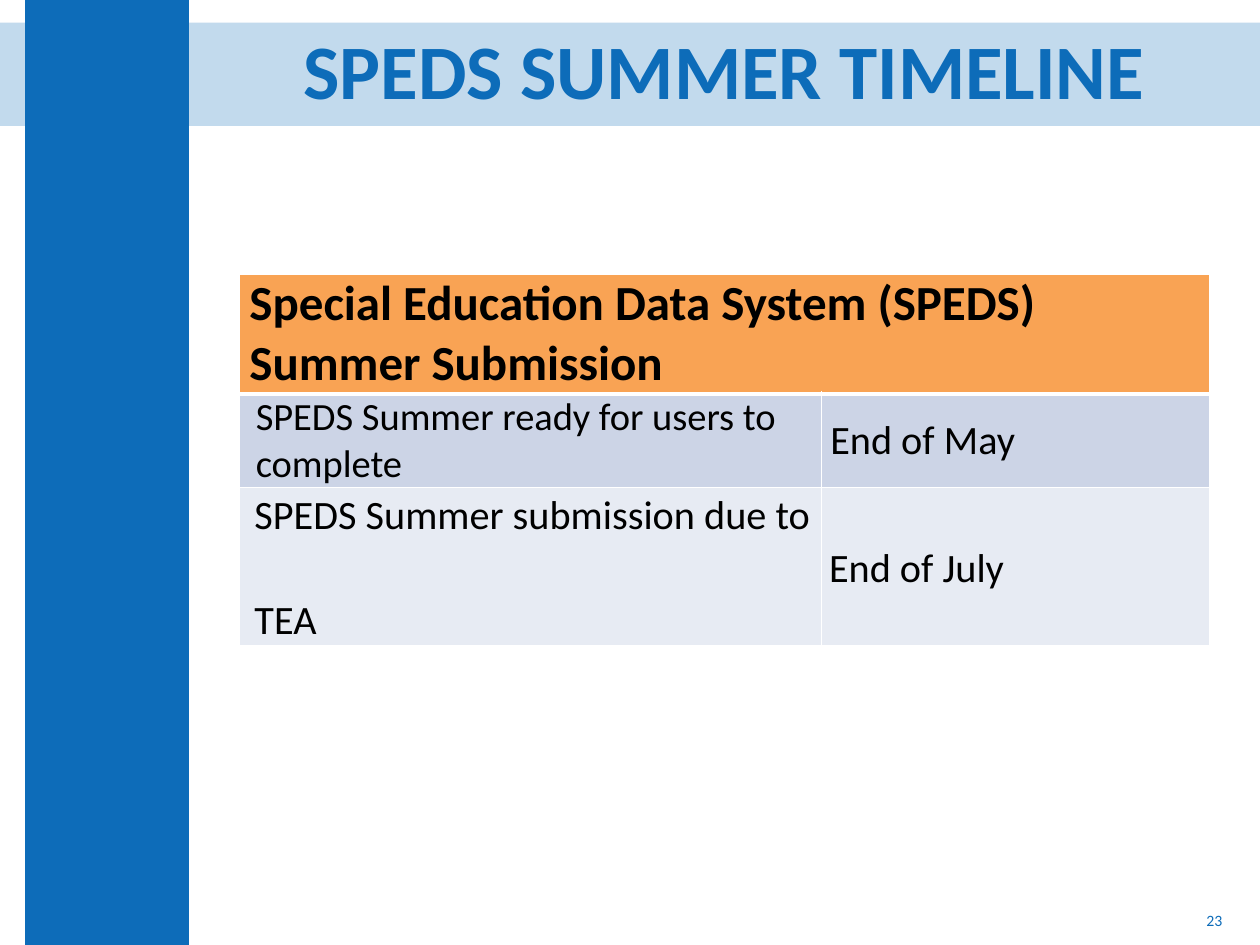
from lxml.etree import SubElement
from pptx import Presentation
from pptx.dml.color import RGBColor
from pptx.enum.shapes import MSO_SHAPE
from pptx.enum.text import MSO_ANCHOR, PP_ALIGN
from pptx.oxml.ns import qn
from pptx.util import Inches, Pt

BLUE, ORANGE, WHITE, BLACK = "0D6CB9", "F9A354", "FFFFFF", "000000"
BLUE_GREY, PALE_GREY = "CCD4E6", "E7EBF3"


def color(value):
    return RGBColor.from_string(value)


def apply(target, values):
    for name, value in values.items():
        setattr(target, name, value)


class TimelineSlide:
    font_name = "Calibri"

    def __init__(self, presentation):
        self.width = presentation.slide_width
        self.height = presentation.slide_height
        self.slide = presentation.slides.add_slide(presentation.slide_layouts[5])

    def area(self, left, top, width, height):
        return [int(share * size) for share, size in zip(
            (left, top, width, height), (self.width, self.height) * 2)]

    def add_lines(self, frame, lines, size, font_color, bold=False, **paragraph_format):
        frame.word_wrap = True
        for index, line in enumerate(lines):
            paragraph = frame.paragraphs[0] if index == 0 else frame.add_paragraph()
            run = paragraph.add_run()
            run.text = line
            apply(paragraph, paragraph_format)
            paragraph.space_before = Pt(0)
            apply(run.font, {"name": self.font_name, "size": Pt(size), "bold": bold})
            run.font.color.rgb = color(font_color)

    def bar(self, area, fill, opacity=100):
        shape = self.slide.shapes.add_shape(MSO_SHAPE.RECTANGLE, *self.area(*area))
        shape.shadow.inherit = False
        shape.fill.solid()
        shape.fill.fore_color.rgb = color(fill)
        shape.line.fill.background()
        if opacity < 100:
            fill_color = shape._element.spPr.find(qn("a:solidFill"))[0]
            SubElement(fill_color, qn("a:alpha"), val=str(opacity * 1000))

    def title(self, area, text):
        shape = self.slide.shapes.title
        apply(shape, dict(zip(("left", "top", "width", "height"), self.area(*area))))
        self.slide.shapes._spTree.append(shape._element)
        shape.text_frame.vertical_anchor = MSO_ANCHOR.MIDDLE
        self.add_lines(shape.text_frame, [text], 44, BLUE, True,
                       alignment=PP_ALIGN.CENTER, line_spacing=0.9)

    def page_number(self, area, text):
        shape = self.slide.shapes.add_textbox(*self.area(*area))
        shape.text_frame.vertical_anchor = MSO_ANCHOR.MIDDLE
        self.add_lines(shape.text_frame, [text], 9, BLUE, alignment=PP_ALIGN.RIGHT)

    def table(self, area, columns, rows):
        table = self.slide.shapes.add_table(
            len(rows), len(columns), *self.area(*area)).table
        table.horz_banding = False
        for column, share in zip(table.columns, columns):
            column.width = int(share * area[2] * self.width)
        for row, share in zip(table.rows, rows):
            row.height = int(share * area[3] * self.height)
        table.cell(0, 0).merge(table.cell(0, len(columns) - 1))
        return table

    def cell(self, cell, lines, size, fill, left, bold=False, spacing=1.0, bottom=1):
        apply(cell, {"vertical_anchor": MSO_ANCHOR.MIDDLE, "margin_left": Inches(left),
                     "margin_right": 0, "margin_top": 0, "margin_bottom": 0})
        self.borders(cell, bottom)
        cell.fill.solid()
        cell.fill.fore_color.rgb = color(fill)
        self.add_lines(cell.text_frame, lines, size, BLACK, bold, line_spacing=spacing)

    def borders(self, cell, bottom):
        properties = cell._tc.get_or_add_tcPr()
        for side, width in {"L": 1, "R": 1, "T": 1, "B": bottom}.items():
            line = SubElement(properties, qn(f"a:ln{side}"), w=str(int(Pt(width))))
            SubElement(SubElement(line, qn("a:solidFill")), qn("a:srgbClr"), val=WHITE)


def main():
    presentation = Presentation()
    presentation.slide_width, presentation.slide_height = Inches(10), Inches(7.5)
    page = TimelineSlide(presentation)
    band_top, band_height = 0.18 / 7.5, 0.82 / 7.5
    page.bar((0, band_top, 1, band_height), BLUE, opacity=25)
    page.bar((0.02, 0, 0.13, 1), BLUE)
    page.title((0.18, band_top, 0.79, band_height), "SPEDS SUMMER TIMELINE")

    table = page.table((0.19, 0.29, 0.77, 0.39), (0.6, 0.4), (0.32, 0.25, 0.43))
    page.cell(table.cell(0, 0),
              ["Special Education Data System (SPEDS)", "Summer Submission"],
              28, ORANGE, 0.08, bold=True, bottom=3)
    page.cell(table.cell(1, 0), ["SPEDS Summer ready for users to", "complete"],
              22, BLUE_GREY, 0.13)
    page.cell(table.cell(1, 1), ["End of May"], 23, BLUE_GREY, 0.07)
    page.cell(table.cell(2, 0), ["SPEDS Summer submission due to", "TEA"],
              23, PALE_GREY, 0.12, spacing=1.07)
    table.cell(2, 0).text_frame.paragraphs[1].space_before = Pt(30)
    page.cell(table.cell(2, 1), ["End of July"], 23, PALE_GREY, 0.06, spacing=1.07)

    page.page_number((0.755, 7.1 / 7.5, 0.225, 0.4 / 7.5), "23")
    presentation.save("out.pptx")


if __name__ == "__main__":
    main()
